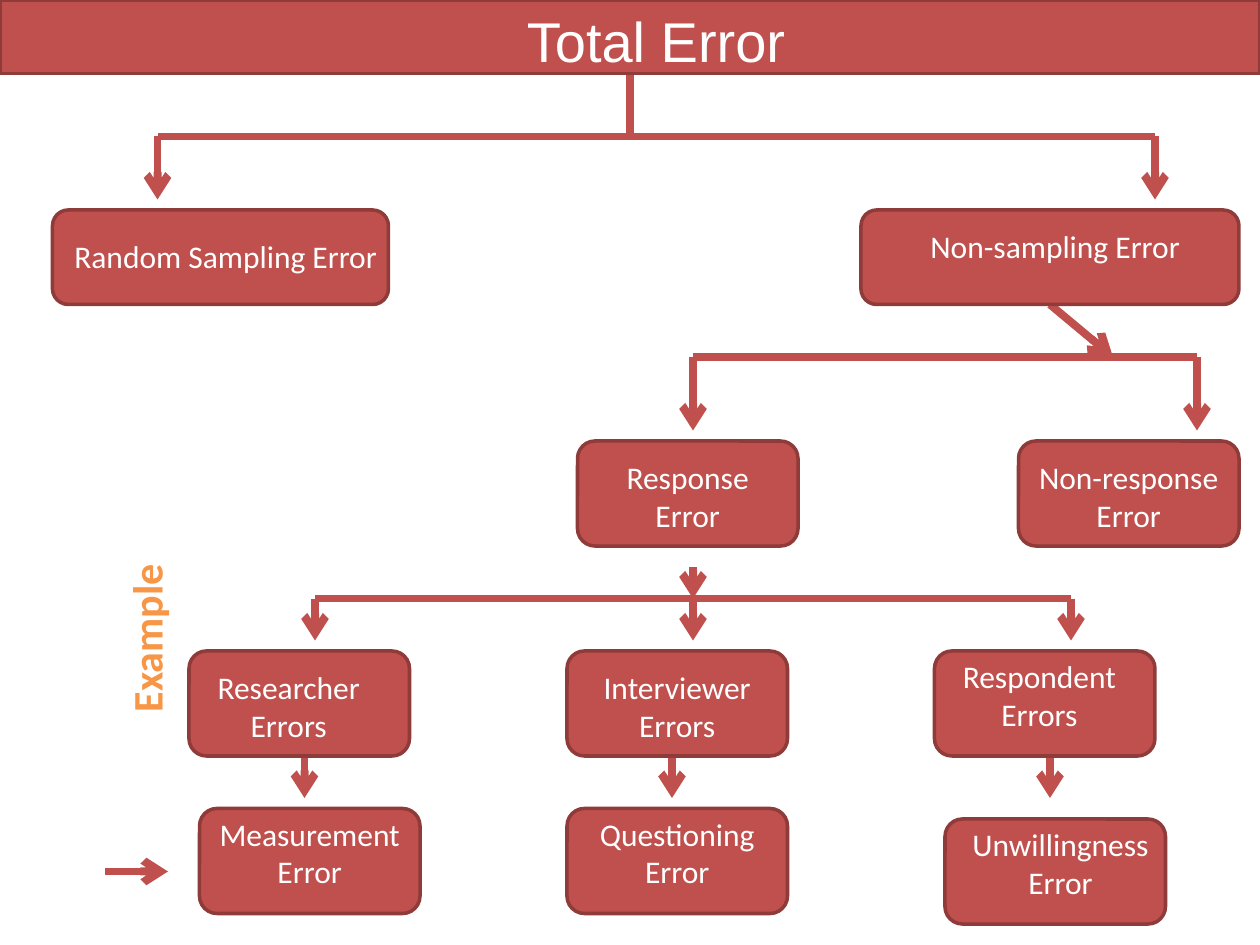
from lxml.etree import SubElement
from pptx import Presentation
from pptx.dml.color import RGBColor
from pptx.enum.shapes import MSO_CONNECTOR as Connector, MSO_SHAPE as Shape
from pptx.enum.text import MSO_AUTO_SIZE as AutoSize, PP_ALIGN as Align
from pptx.oxml.ns import qn
from pptx.util import Inches, Pt

RED = RGBColor(0xC0, 0x50, 0x4D)
DARK_RED = RGBColor(0x8E, 0x3B, 0x39)
WHITE = RGBColor(0xFF, 0xFF, 0xFF)
ORANGE = RGBColor(0xF7, 0x96, 0x46)

COLUMNS, ROWS = 120, 90  # the slide as a grid of 1/12 inch cells
ONE_LINE, TWO_LINES = 4.8, 8.5  # label heights in rows
NODE_WIDTH, NODE_HEIGHT = 21, 10

# Box (column, row, width, height), then label (text, column, row, width, height)
NODES = [
    ((5, 20, 32, 9), ("Random Sampling Error", 5, 22, 33, ONE_LINE)),
    ((82, 20, 36, 9), ("Non-sampling Error", 84, 21, 33, ONE_LINE)),
] + [
    ((column, row, NODE_WIDTH, NODE_HEIGHT), (*label, TWO_LINES))
    for column, row, label in [
        (55, 42, ("Response Error", 57, 43, 17)),
        (97, 42, ("Non-response Error", 95, 43, 25)),
        (18, 62, ("Researcher Errors", 19, 63, 17)),
        (54, 62, ("Interviewer Errors", 56, 63, 17)),
        (89, 62, ("Respondent Errors", 90, 62, 18)),
        (19, 77, ("Measurement Error", 18, 77, 23)),
        (54, 77, ("Questioning Error", 55, 77, 19)),
        (90, 78, ("Unwillingness Error", 91, 78, 20)),
    ]
]


def grid(*cells):
    return [Inches(cell / 12) for cell in cells]


def add_line(shapes, start, end, arrow=False):
    line = shapes.add_connector(Connector.STRAIGHT, *grid(*start, *end))
    line.line.color.rgb = RED
    line.line.width = Pt(4.5)
    if arrow:
        SubElement(line.line._get_or_add_ln(), qn("a:tailEnd"), type="arrow")
    SubElement(line._element.spPr, qn("a:effectLst"))


def add_branch(slide, stem, bar_row, tips, tip_row, stem_arrow=False):
    """Stem (start column, row, end column) to a bar with a drop at each tip column."""
    shapes = slide.shapes.add_group_shape().shapes
    start_column, start_row, joint = stem
    add_line(shapes, (start_column, start_row), (joint, bar_row), stem_arrow)
    for tip in tips:
        if tip != joint:
            add_line(shapes, (joint, bar_row), (tip, bar_row))
        add_line(shapes, (tip, bar_row), (tip, tip_row), True)


def add_example_arrows(slide):
    shapes = slide.shapes.add_group_shape().shapes
    for column in (29, 64, 100):
        add_line(shapes, (column, 72), (column, 76), True)
    add_line(shapes, (10, 83), (16, 83), True)


def add_box(slide, kind, area):
    box = slide.shapes.add_shape(kind, *grid(*area))
    box.shadow.inherit = False
    box.fill.solid()
    box.fill.fore_color.rgb = RED
    box.line.color.rgb = DARK_RED
    box.line.width = Pt(2)


def add_label(slide, text, *area, size=18, font="Calibri", color=WHITE,
              align=Align.CENTER, bold=None):
    label = slide.shapes.add_textbox(*grid(*area))
    frame = label.text_frame
    frame.word_wrap = True
    frame.auto_size = AutoSize.SHAPE_TO_FIT_TEXT
    paragraph = frame.paragraphs[0]
    paragraph.alignment = align
    run = paragraph.add_run()
    run.text = text
    run.font.size = Pt(size)
    run.font.name = font
    run.font.bold = bold
    run.font.color.rgb = color
    return label


def main():
    deck = Presentation()
    deck.slide_width, deck.slide_height = grid(COLUMNS, ROWS)
    slide = deck.slides.add_slide(deck.slide_layouts[6])

    add_example_arrows(slide)
    add_branch(slide, (66, 54, 66), 57, (30, 66, 102), 61, stem_arrow=True)
    add_branch(slide, (100, 29, 106), 34, (66, 114), 41, stem_arrow=True)
    add_branch(slide, (60, 7, 60), 13, (15, 110), 19)

    add_box(slide, Shape.RECTANGLE, (0, 0, COLUMNS, 7))
    for area, _ in NODES:
        add_box(slide, Shape.ROUNDED_RECTANGLE, area)

    add_label(slide, "Total Error", 5, 0, 115, 7.7, size=32, font="Arial")
    for _, label in NODES:
        add_label(slide, *label)
    example = add_label(slide, "Example", 3.4, 55.5, 21, 6, size=24,
                        color=ORANGE, align=Align.LEFT, bold=True)
    example.rotation = 270

    deck.save("out.pptx")


if __name__ == "__main__":
    main()
